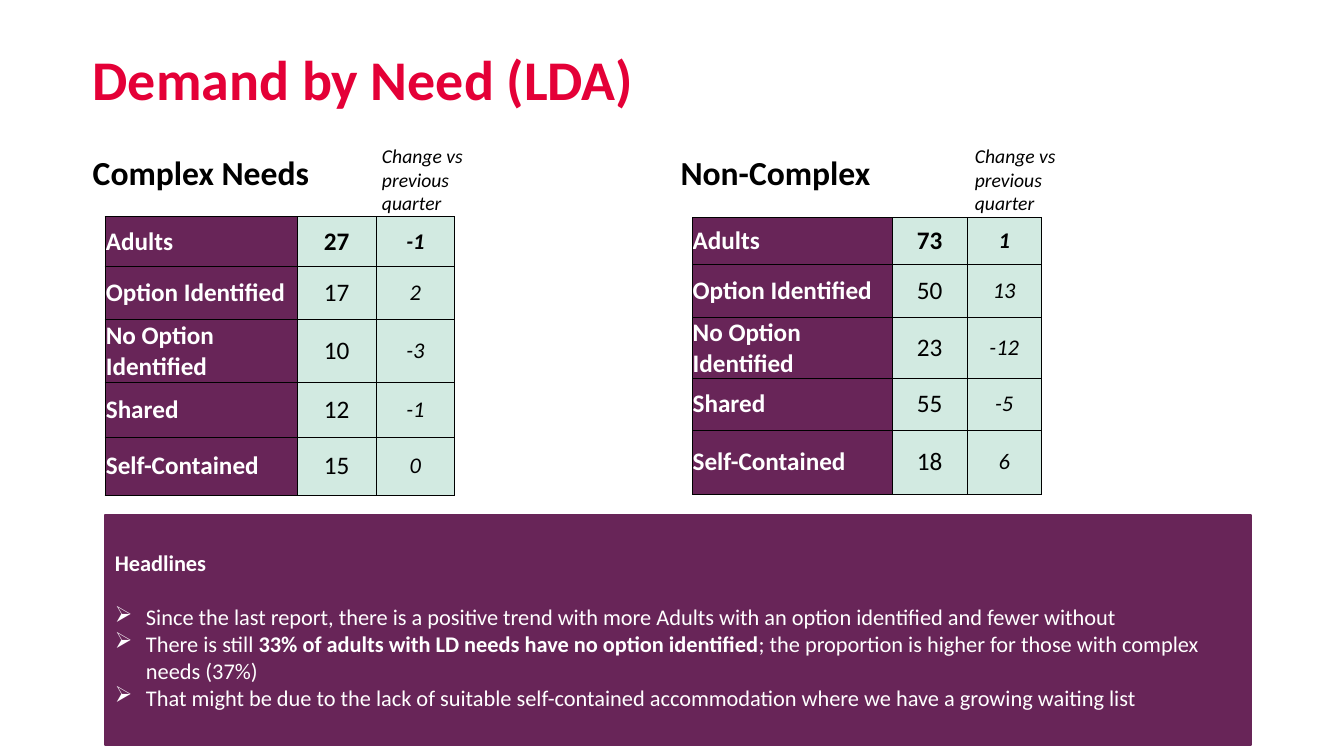
import pptx
import pptx.dml.color
import pptx.enum.shapes
import pptx.enum.text
import pptx.oxml.ns
import pptx.util
from lxml import etree
from pptx.util import Inches

RED = pptx.dml.color.RGBColor(0xE4, 0x00, 0x37)
PLUM = pptx.dml.color.RGBColor(0x68, 0x25, 0x58)
MINT = pptx.dml.color.RGBColor(0xD2, 0xEA, 0xE1)
WHITE = pptx.dml.color.RGBColor(0xFF, 0xFF, 0xFF)
BLACK = pptx.dml.color.RGBColor(0x00, 0x00, 0x00)

LEFT = pptx.enum.text.PP_ALIGN.LEFT
CENTER = pptx.enum.text.PP_ALIGN.CENTER
TOP = pptx.enum.text.MSO_ANCHOR.TOP
MIDDLE = pptx.enum.text.MSO_ANCHOR.MIDDLE
BOTTOM = pptx.enum.text.MSO_ANCHOR.BOTTOM

NEEDS = ["Adults", "Option Identified", "No Option Identified", "Shared", "Self-Contained"]


def write(paragraph, text, size=16, color=BLACK, bold=False, italic=False, align=LEFT):
    run = paragraph.add_run()
    run.text = text
    font = run.font
    font.name = "Calibri"
    font.size = pptx.util.Pt(size)
    font.color.rgb = color
    font.bold = bold
    font.italic = italic
    paragraph.alignment = align


def set_margins(frame, margin):
    frame.margin_left = frame.margin_right = Inches(margin)
    frame.margin_top = frame.margin_bottom = Inches(margin)


def place_title(slide, text):
    title = slide.shapes.title
    title.left, title.top = Inches(0.92), Inches(0.4)
    title.width, title.height = Inches(11.5), Inches(0.84)
    frame = title.text_frame
    frame.auto_size = pptx.enum.text.MSO_AUTO_SIZE.NONE
    frame.vertical_anchor = MIDDLE
    set_margins(frame, 0)
    frame.paragraphs[0].line_spacing = 0.9
    write(frame.paragraphs[0], text, size=40, color=RED, bold=True)


def add_text_box(slide, left, top, width, height, anchor=TOP):
    """Return the text frame of a new wrapping text box."""
    box = slide.shapes.add_textbox(Inches(left), Inches(top), Inches(width), Inches(height))
    box.text_frame.word_wrap = True
    box.text_frame.vertical_anchor = anchor
    return box.text_frame


def add_heading(slide, left, text):
    frame = add_text_box(slide, left, 1.38, 5.64, 0.53, anchor=BOTTOM)
    set_margins(frame, 0)
    paragraph = frame.paragraphs[0]
    paragraph.space_before = paragraph.space_after = pptx.util.Pt(11.3)
    write(paragraph, text, size=24, bold=True)


def add_change_label(slide, left):
    frame = add_text_box(slide, left, 1.38, 1.28, 0.81)
    write(frame.paragraphs[0], "Change vs previous quarter", size=14, italic=True)


def draw_borders(cell):
    properties = cell._tc.get_or_add_tcPr()
    for index, side in enumerate(("a:lnL", "a:lnR", "a:lnT", "a:lnB")):
        line = etree.Element(pptx.oxml.ns.qn(side), w=str(pptx.util.Pt(0.5)))
        fill = etree.SubElement(line, pptx.oxml.ns.qn("a:solidFill"))
        etree.SubElement(fill, pptx.oxml.ns.qn("a:srgbClr"), val=str(BLACK))
        properties.insert(index, line)


def fill_cell(cell, text, fill, margin, **text_format):
    cell.fill.solid()
    cell.fill.fore_color.rgb = fill
    cell.vertical_anchor = MIDDLE
    set_margins(cell, margin)
    write(cell.text_frame.paragraphs[0], text, **text_format)
    draw_borders(cell)


def add_needs_table(slide, left, top, widths, heights, counts, changes, label_margin):
    table = slide.shapes.add_table(
        len(NEEDS), len(widths), Inches(left), Inches(top),
        Inches(sum(widths)), Inches(sum(heights))).table
    table.first_row = table.horz_banding = False
    for column, width in zip(table.columns, widths):
        column.width = Inches(width)
    for index, (need, count, change) in enumerate(zip(NEEDS, counts, changes)):
        table.rows[index].height = Inches(heights[index])
        total = index == 0
        fill_cell(table.cell(index, 0), need, PLUM, label_margin,
                  size=18, color=WHITE, bold=True)
        fill_cell(table.cell(index, 1), str(count), MINT, 0.01,
                  size=18, bold=total, align=CENTER)
        fill_cell(table.cell(index, 2), str(change), MINT, 0.01,
                  size=16, bold=total, italic=True, align=CENTER)


def add_arrow_bullet(paragraph):
    properties = paragraph._p.get_or_add_pPr()
    properties.set("marL", str(Inches(0.31)))
    properties.set("indent", str(Inches(-0.31)))
    etree.SubElement(properties, pptx.oxml.ns.qn("a:buChar"), char="➢")


def add_headlines(slide, points):
    """Add the panel; each point is a list of (text, bold) pairs."""
    panel = slide.shapes.add_shape(
        pptx.enum.shapes.MSO_SHAPE.RECTANGLE,
        Inches(1.04), Inches(5.11), Inches(11.37), Inches(2.28))
    panel.shadow.inherit = False
    panel.fill.solid()
    panel.fill.fore_color.rgb = PLUM
    panel.line.color.rgb = PLUM
    panel.line.width = pptx.util.Pt(1)
    frame = panel.text_frame
    frame.word_wrap = True
    frame.vertical_anchor = MIDDLE
    heading = frame.paragraphs[0]
    write(heading, "Headlines", color=WHITE, bold=True)
    heading.space_after = pptx.util.Pt(19.5)
    for point in points:
        paragraph = frame.add_paragraph()
        for text, bold in point:
            write(paragraph, text, color=WHITE, bold=bold)
        add_arrow_bullet(paragraph)


def main():
    presentation = pptx.Presentation()
    presentation.slide_width = Inches(13.33)
    presentation.slide_height = Inches(7.5)
    slide = presentation.slides.add_slide(presentation.slide_layouts[5])

    place_title(slide, "Demand by Need (LDA)")
    add_heading(slide, 0.92, "Complex Needs")
    add_heading(slide, 6.75, "Non-Complex")
    add_needs_table(slide, 1.04, 2.15, [1.91, 0.78, 0.78], [0.49, 0.53, 0.57, 0.55, 0.57],
                    [27, 17, 10, 12, 15], [-1, 2, -3, -1, 0], label_margin=0.01)
    add_needs_table(slide, 6.87, 2.16, [1.98, 0.74, 0.74], [0.46, 0.53, 0.55, 0.52, 0.63],
                    [73, 50, 23, 55, 18], [1, 13, -12, -5, 6], label_margin=0)
    add_headlines(slide, [
        [("Since the last report, there is a positive trend with more Adults "
          "with an option identified and fewer without", False)],
        [("There is still ", False),
         ("33% of adults with LD needs have no option identified", True),
         ("; the proportion is higher for those with complex needs (37%)", False)],
        [("That might be due to the lack of suitable self-contained accommodation "
          "where we have a growing waiting list", False)],
    ])
    add_change_label(slide, 3.69)
    add_change_label(slide, 9.57)
    presentation.save("out.pptx")


if __name__ == "__main__":
    main()
